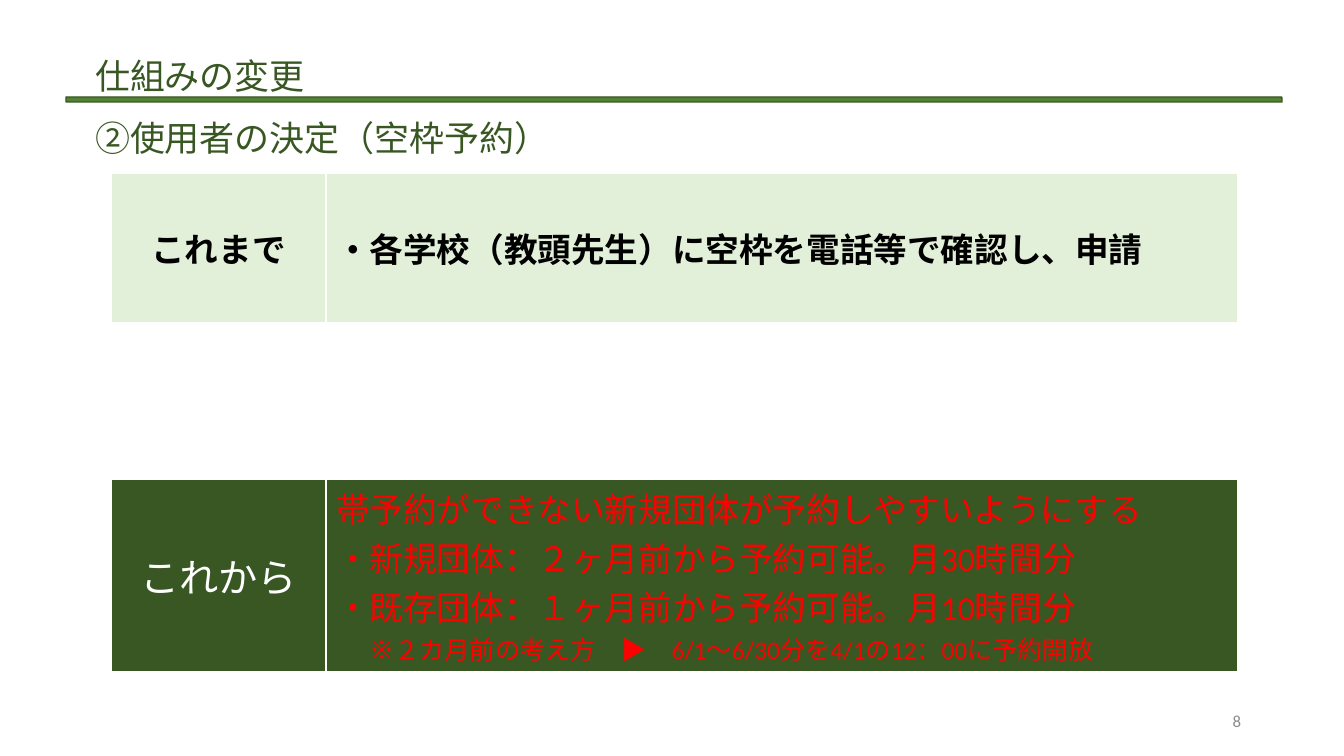
from pptx import Presentation
from pptx import util as u
from pptx.dml.color import RGBColor
from pptx.enum import shapes, text
from pptx.oxml.ns import qn
from lxml import etree

PX = 9071
COLORS = {"dark": "385723", "rule": "548235", "pale": "E2F0D9", "black": "000000",
          "white": "FFFFFF", "red": "FF0000", "grey": "8C8C8C"}
LATIN, CJK = "Calibri", "Noto Sans CJK JP"
BEFORE = ["・各学校（教頭先生）に空枠を電話等で確認し、申請"]
AFTER = ["帯予約ができない新規団体が予約しやすいようにする",
         "・新規団体：２ヶ月前から予約可能。月30時間分",
         "・既存団体：１ヶ月前から予約可能。月10時間分",
         "※２カ月前の考え方　▶　6/1～6/30分を4/1の12：00に予約開放"]


def px(*lengths):
    """Turn px lengths into EMU."""
    return [u.Emu(n * PX) for n in lengths]


def rgb(name):
    """Look up a named colour."""
    return RGBColor.from_string(COLORS[name])


def style(p, size, color, bold=False, latin=LATIN, align=text.PP_ALIGN.LEFT):
    """Format a paragraph and its runs."""
    p.alignment = align
    for r in p.runs:
        r.font.size, r.font.bold, r.font.name = u.Pt(size), bold, latin
        r.font.color.rgb = rgb(color)
        etree.SubElement(r._r.get_or_add_rPr(), qn("a:ea")).set("typeface", CJK)


def add_heading(sp, box, words):
    """Fill and place a heading placeholder."""
    sp.left, sp.top, sp.width, sp.height = px(*box)
    tf = sp.text_frame
    tf.text = words
    tf.word_wrap, tf.auto_size = True, text.MSO_AUTO_SIZE.NONE
    tf.vertical_anchor = text.MSO_ANCHOR.TOP
    p = tf.paragraphs[0]
    p.space_before, p.line_spacing = u.Pt(0), 1.0
    style(p, 25, "dark", latin=CJK)
    pPr = p._p.get_or_add_pPr()
    pPr.set("marL", "0")
    pPr.set("indent", "0")
    etree.SubElement(pPr, qn("a:buNone"))


def add_rule(s):
    """Draw the bar under the title."""
    sp = s.shapes.add_shape(shapes.MSO_SHAPE.ROUND_1_RECTANGLE, *px(66, 97, 1216, 5))
    sp.shadow.inherit = False
    sp.fill.solid()
    sp.fill.fore_color.rgb = rgb("rule")
    sp.line.color.rgb = rgb("dark")
    sp.line.width = u.Pt(1)


def set_borders(cell):
    """Give a cell thin white borders."""
    tcPr = cell._tc.get_or_add_tcPr()
    for i, side in enumerate(("lnL", "lnR", "lnT", "lnB")):
        ln = etree.Element(qn(f"a:{side}"), w=str(u.Pt(1)))
        fill = etree.SubElement(ln, qn("a:solidFill"))
        etree.SubElement(fill, qn("a:srgbClr")).set("val", COLORS["white"])
        tcPr.insert(i, ln)


def fill_cell(cell, lines, fill, sizes, color, bold, align=text.PP_ALIGN.LEFT):
    """Write the lines of a cell on its fill."""
    cell.fill.solid()
    cell.fill.fore_color.rgb = rgb(fill)
    cell.vertical_anchor = text.MSO_ANCHOR.MIDDLE
    cell.text = "\n".join(lines)
    for p, size in zip(cell.text_frame.paragraphs, sizes):
        style(p, size, color, bold, align=align)


def add_comparison(s):
    """Add the table of the old and new rules."""
    widths, heights = (215, 912), (150, 156, 170)
    frame = s.shapes.add_table(3, 2, *px(111, 173, sum(widths), sum(heights)))
    table = frame.table
    table.first_row = table.horz_banding = False
    for col, width in zip(table.columns, px(*widths)):
        col.width = width
    for row, height in zip(table.rows, px(*heights)):
        row.height = height
    for cell in table.iter_cells():
        cell.fill.background()
        set_borders(cell)
    center = text.PP_ALIGN.CENTER
    fill_cell(table.cell(0, 0), ["これまで"], "pale", [24], "black", True, center)
    fill_cell(table.cell(0, 1), BEFORE, "pale", [24], "black", True)
    fill_cell(table.cell(2, 0), ["これから"], "dark", [28], "white", False, center)
    fill_cell(table.cell(2, 1), AFTER, "dark", [24, 24, 24, 18], "red", False)
    note = table.cell(2, 1).text_frame.paragraphs[-1]
    note._p.get_or_add_pPr().set("marL", str(px(33)[0]))


def add_page_number(s):
    """Add the page number at the lower right."""
    tf = s.shapes.add_textbox(*px(949, 701, 302, 40)).text_frame
    tf.word_wrap = True
    tf.vertical_anchor = text.MSO_ANCHOR.MIDDLE
    tf.text = "8"
    style(tf.paragraphs[0], 12, "grey", align=text.PP_ALIGN.RIGHT)


def main():
    """Build and save the slide."""
    prs = Presentation()
    prs.slide_width, prs.slide_height = px(1344, 756)
    s = prs.slides.add_slide(prs.slide_layouts[1])
    add_rule(s)
    add_heading(s.shapes.title, (85, 49, 1169, 52), "仕組みの変更")
    add_heading(s.placeholders[1], (85, 111, 1169, 52), "②使用者の決定（空枠予約）")
    add_comparison(s)
    add_page_number(s)
    prs.save("out.pptx")


if __name__ == "__main__":
    main()
